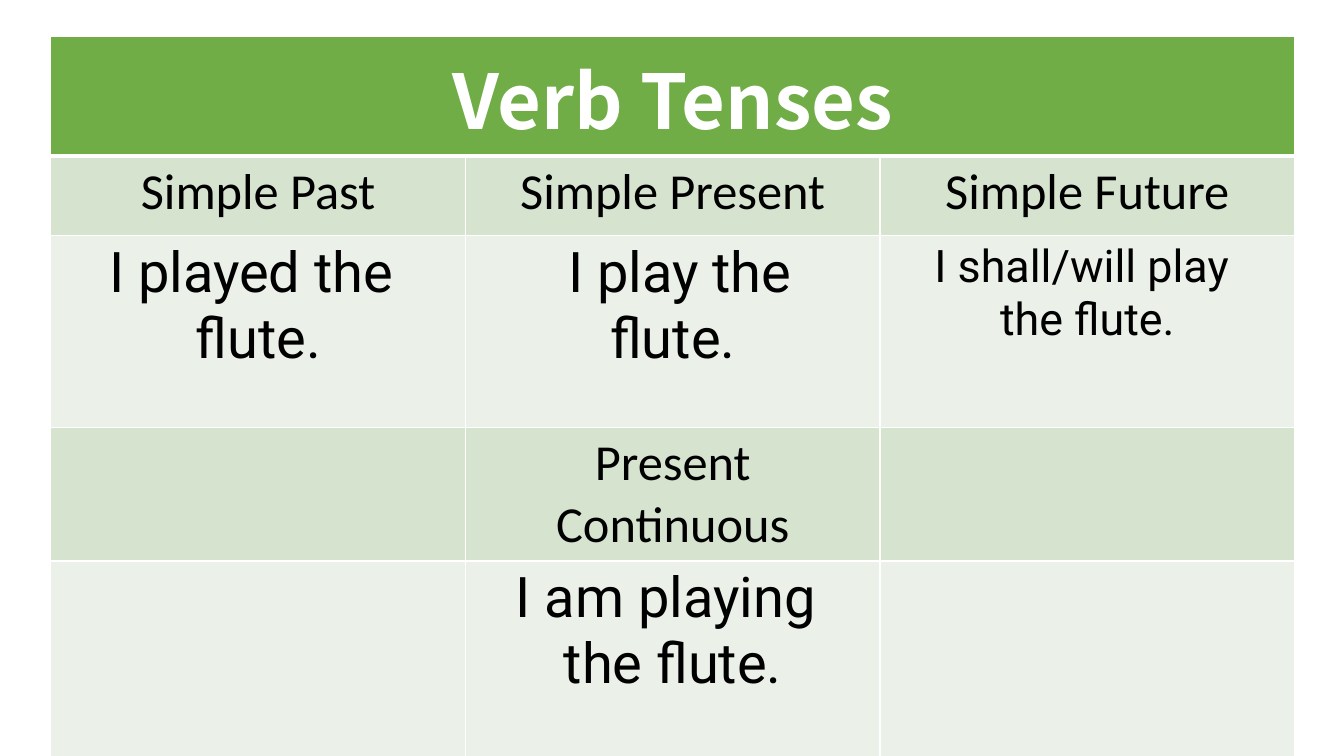
from dataclasses import dataclass

from lxml.etree import SubElement
from pptx import Presentation
from pptx.dml.color import RGBColor as Rgb
from pptx.enum.text import PP_ALIGN as Align
from pptx.oxml.ns import qn
from pptx.util import Cm, Pt


@dataclass(frozen=True)
class Theme:
    white: str = "FFFFFF"
    black: str = "000000"
    title_fill: str = "70AD47"
    tense_fill: str = "D5E3CF"
    example_fill: str = "EBF1E9"
    title_font: str = "Noto Sans CJK JP"
    tense_font: str = "Calibri"
    example_font: str = "Roboto"
    title_size: int = 54
    tense_size: int = 36
    example_size: int = 40
    long_example_size: int = 32
    thin_rule: int = 1
    thick_rule: int = 3


THEME = Theme()

TITLE_FORMAT = {"name": THEME.title_font, "size": Pt(THEME.title_size), "bold": True}
TENSE_FORMAT = {"name": THEME.tense_font, "size": Pt(THEME.tense_size), "bold": False}
EXAMPLE_FORMAT = {"name": THEME.example_font, "size": Pt(THEME.example_size), "bold": False}
LONG_EXAMPLE_FORMAT = EXAMPLE_FORMAT | {"size": Pt(THEME.long_example_size)}

# Each row: height in cm, then its cells; a line break starts a new paragraph
TITLE = "Verb Tenses"
TITLE_HEIGHT = 2.87
TENSE_ROWS = [
    (2.01, ["Simple Past", "Simple Present", "Simple Future"]),
    (4.83, ["I played the \nflute.", " I play the\nflute.", "I shall/will play \nthe flute."]),
    (2.21, ["", "Present Continuous", ""]),
    (5.31, ["", "I am playing \nthe flute.", ""]),
]
COLUMN_COUNT = 3
COLUMN_WIDTH = 10.45


def rule_cell(cell, **widths):
    """Draw white borders; widths in points override the thin rule by side."""
    properties = cell._tc.get_or_add_tcPr()
    for side in ("L", "R", "T", "B"):
        width = Pt(widths.get(side, THEME.thin_rule))
        border = SubElement(properties, qn(f"a:ln{side}"), w=str(width))
        fill = SubElement(border, qn("a:solidFill"))
        SubElement(fill, qn("a:srgbClr"), val=THEME.white)


def fill_cell(cell, color):
    cell.fill.solid()
    cell.fill.fore_color.rgb = Rgb.from_string(color)


def write_cell(cell, wording, font_format, color):
    if not wording:
        return
    cell.text = wording
    for paragraph in cell.text_frame.paragraphs:
        paragraph.alignment = Align.CENTER
        font = paragraph.runs[0].font
        for attribute, value in font_format.items():
            setattr(font, attribute, value)
        font.color.rgb = Rgb.from_string(color)


def add_tense_table(slide):
    heights = [TITLE_HEIGHT] + [height for height, _ in TENSE_ROWS]
    tenses = slide.shapes.add_table(
        len(heights), COLUMN_COUNT, Cm(1.28), Cm(0.92),
        Cm(COLUMN_COUNT * COLUMN_WIDTH), Cm(sum(heights)),
    ).table
    tenses.first_row = tenses.horz_banding = False
    for column in tenses.columns:
        column.width = Cm(COLUMN_WIDTH)
    for row, height in zip(tenses.rows, heights):
        row.height = Cm(height)
    return tenses


def fill_title_row(tenses):
    for column in range(COLUMN_COUNT):
        title_part = tenses.cell(0, column)
        rule_cell(title_part, B=THEME.thick_rule)
        fill_cell(title_part, THEME.title_fill)
    heading = tenses.cell(0, 0)
    heading.merge(tenses.cell(0, COLUMN_COUNT - 1))
    write_cell(heading, TITLE, TITLE_FORMAT, THEME.white)


def fill_tense_rows(tenses):
    for row, (_, wordings) in enumerate(TENSE_ROWS, start=1):
        names_tense = row % 2 == 1
        top = THEME.thick_rule if row == 1 else THEME.thin_rule
        for column, wording in enumerate(wordings):
            cell = tenses.cell(row, column)
            rule_cell(cell, T=top)
            fill_cell(cell, THEME.tense_fill if names_tense else THEME.example_fill)
            if names_tense:
                font_format = TENSE_FORMAT
            elif wording.startswith("I shall/will"):
                font_format = LONG_EXAMPLE_FORMAT
            else:
                font_format = EXAMPLE_FORMAT
            write_cell(cell, wording, font_format, THEME.black)


def main():
    deck = Presentation()
    deck.slide_width, deck.slide_height = Cm(33.87), Cm(19.05)
    slide = deck.slides.add_slide(deck.slide_layouts[6])

    # Table with a title across, then tense names and examples in turn
    tenses = add_tense_table(slide)
    fill_title_row(tenses)
    fill_tense_rows(tenses)

    deck.save("out.pptx")


if __name__ == "__main__":
    main()
